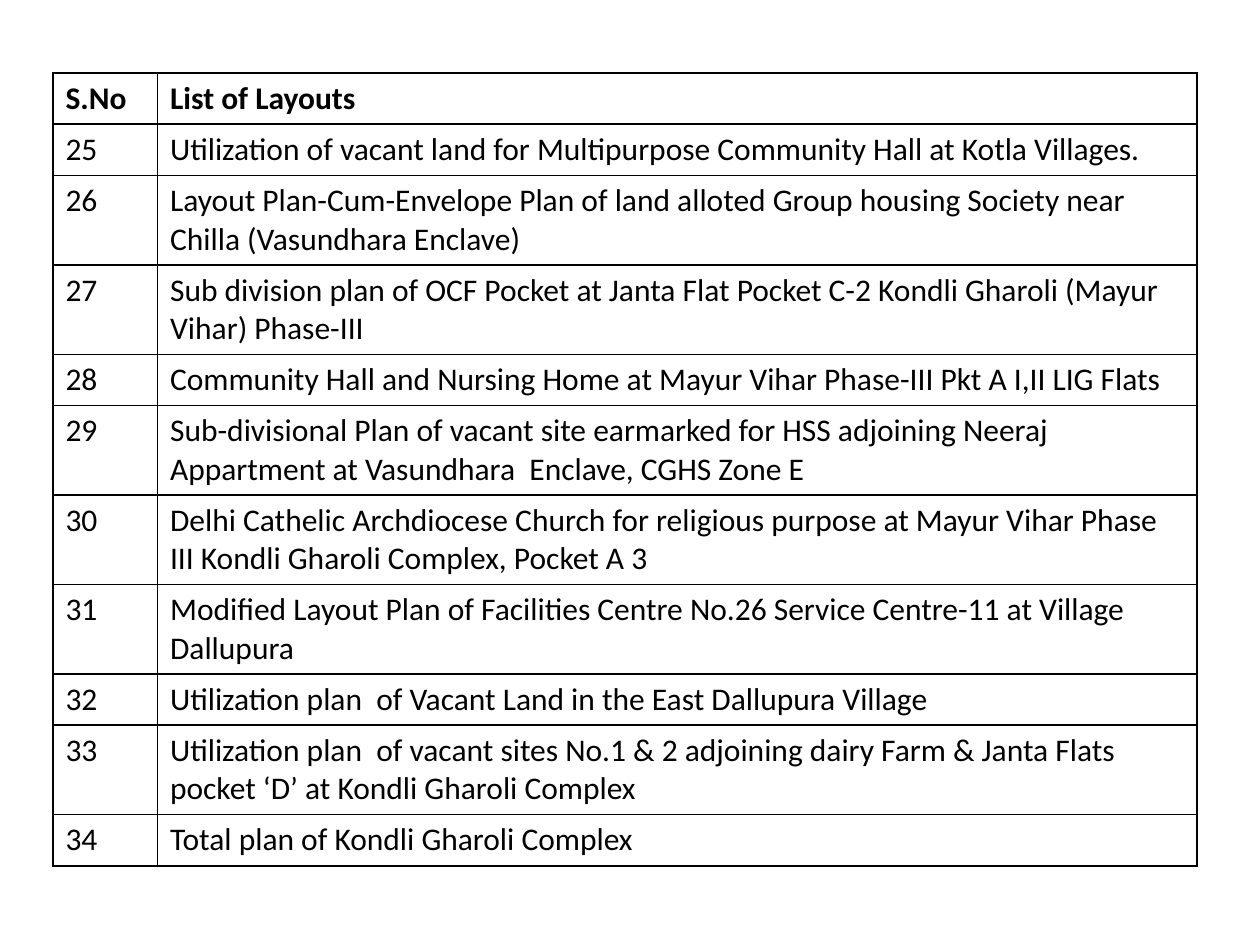
import pptx
import pptx.dml.color
import pptx.oxml
import pptx.oxml.ns
import pptx.util

BLACK = pptx.dml.color.RGBColor(0x00, 0x00, 0x00)

SLIDE_WIDTH = pptx.util.Inches(10)
SLIDE_HEIGHT = pptx.util.Inches(7.5)
TABLE_LEFT, TABLE_TOP = 0.42, 0.58
TABLE_HEIGHT = 6.2
COLUMN_WIDTHS = (0.83, 8.25)
ONE_LINE_HEIGHT, TWO_LINE_HEIGHT = 0.37, 0.65
CHARACTERS_PER_LINE = 80
BORDER_WIDTH = pptx.util.Pt(1)

TEXT_FORMAT = {"name": "Calibri", "size": pptx.util.Pt(18), "bold": False}
HEADER_FORMAT = {**TEXT_FORMAT, "bold": True}

HEADER = ("S.No", "List of Layouts")
FIRST_NUMBER = 25
LAYOUTS = (
    "Utilization of vacant land for Multipurpose Community Hall at Kotla Villages.",
    "Layout Plan-Cum-Envelope Plan of land alloted Group housing Society near "
    "Chilla (Vasundhara Enclave)",
    "Sub division plan of OCF Pocket at Janta Flat Pocket C-2 Kondli Gharoli "
    "(Mayur Vihar) Phase-III",
    "Community Hall and Nursing Home at Mayur Vihar Phase-III Pkt A I,II LIG Flats",
    "Sub-divisional Plan of vacant site earmarked for HSS adjoining Neeraj "
    "Appartment at Vasundhara  Enclave, CGHS Zone E",
    "Delhi Cathelic Archdiocese Church for religious purpose at Mayur Vihar Phase "
    "III Kondli Gharoli Complex, Pocket A 3",
    "Modified Layout Plan of Facilities Centre No.26 Service Centre-11 at Village "
    "Dallupura",
    "Utilization plan  of Vacant Land in the East Dallupura Village",
    "Utilization plan  of vacant sites No.1 & 2 adjoining dairy Farm & Janta Flats "
    "pocket ‘D’ at Kondli Gharoli Complex",
    "Total plan of Kondli Gharoli Complex",
)


def add_borders(cell):
    """Draw a thin black line on each side of a cell."""
    properties = cell._tc.get_or_add_tcPr()
    for position, side in enumerate(("lnL", "lnR", "lnT", "lnB")):
        line = pptx.oxml.parse_xml(
            f'<a:{side} {pptx.oxml.ns.nsdecls("a")} w="{BORDER_WIDTH}">'
            f'<a:solidFill><a:srgbClr val="{BLACK}"/></a:solidFill></a:{side}>'
        )
        properties.insert(position, line)


def fill_cell(cell, text, text_format):
    """Write a cell's text and give it its format and borders."""
    cell.fill.background()
    run = cell.text_frame.paragraphs[0].add_run()
    run.text = text
    for attribute, value in text_format.items():
        setattr(run.font, attribute, value)
    run.font.color.rgb = BLACK
    add_borders(cell)


def add_layout_table(slide, records):
    """Add the table, with taller rows for descriptions that wrap."""
    frame = slide.shapes.add_table(
        len(records), len(COLUMN_WIDTHS),
        pptx.util.Inches(TABLE_LEFT), pptx.util.Inches(TABLE_TOP),
        pptx.util.Inches(sum(COLUMN_WIDTHS)), pptx.util.Inches(TABLE_HEIGHT),
    )
    table = frame.table
    table.horz_banding = False
    for column, width in zip(table.columns, COLUMN_WIDTHS):
        column.width = pptx.util.Inches(width)
    for index, (row, record) in enumerate(zip(table.rows, records)):
        wraps = len(record[-1]) > CHARACTERS_PER_LINE
        row.height = pptx.util.Inches(TWO_LINE_HEIGHT if wraps else ONE_LINE_HEIGHT)
        text_format = TEXT_FORMAT if index else HEADER_FORMAT
        for cell, text in zip(row.cells, record):
            fill_cell(cell, text, text_format)
    frame.height = pptx.util.Inches(TABLE_HEIGHT)


def main():
    presentation = pptx.Presentation()
    presentation.slide_width = SLIDE_WIDTH
    presentation.slide_height = SLIDE_HEIGHT
    slide = presentation.slides.add_slide(presentation.slide_layouts[6])

    # Numbered list of layouts under a header row
    numbered = [(str(number), text) for number, text in enumerate(LAYOUTS, FIRST_NUMBER)]
    add_layout_table(slide, [HEADER, *numbered])

    presentation.save("out.pptx")


if __name__ == "__main__":
    main()
